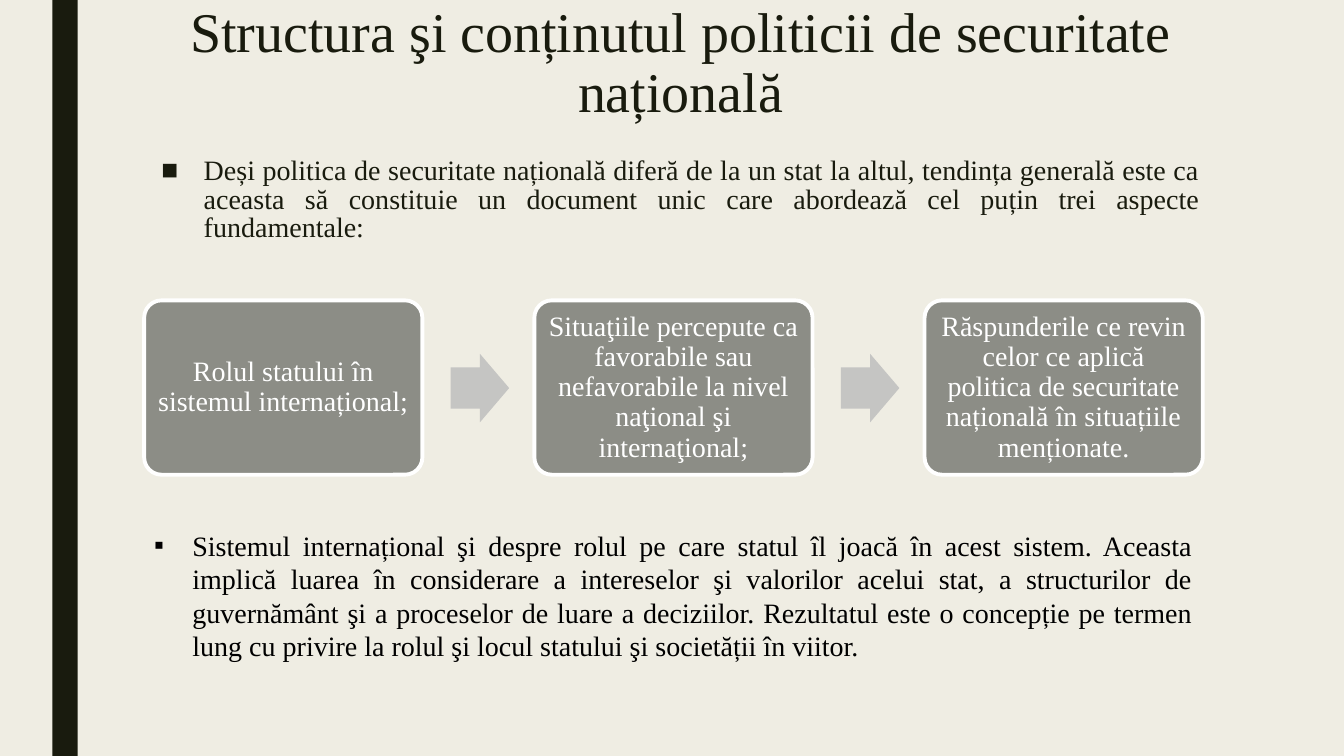
from dataclasses import dataclass
from typing import Optional

from lxml import etree
from pptx import Presentation
from pptx.dml.color import RGBColor
from pptx.enum.shapes import MSO_SHAPE
from pptx.enum.text import MSO_ANCHOR, MSO_AUTO_SIZE, PP_ALIGN
from pptx.oxml.ns import qn
from pptx.util import Emu, Pt

RECT, ROUND, ARROW = MSO_SHAPE.RECTANGLE, MSO_SHAPE.ROUNDED_RECTANGLE, MSO_SHAPE.RIGHT_ARROW
TOP, MIDDLE = MSO_ANCHOR.TOP, MSO_ANCHOR.MIDDLE
CENTER, JUSTIFY = PP_ALIGN.CENTER, PP_ALIGN.JUSTIFY
SCALE = 9144  # EMU in one px, 100 px to the inch


@dataclass(frozen=True)
class Theme:
    font: str = "Times New Roman"
    back: str = "EFEDE3"
    dark: str = "191B0E"
    black: str = "000000"
    white: str = "FFFFFF"
    card: str = "8C8D86"
    arrow: str = "C5C5C3"
    head: int = 40
    text: int = 20
    edge: float = 2.75


@dataclass(frozen=True)
class Box:
    left: int
    top: int
    width: int
    height: int


@dataclass(frozen=True)
class Style:
    size: int
    color: str
    align: PP_ALIGN
    line: float = 1.0
    after: int = 0
    bullet: Optional[str] = None
    indent: int = 0


THEME = Theme()
HEAD = Style(THEME.head, THEME.dark, CENTER, 0.89)
INTRO = Style(THEME.text, THEME.dark, JUSTIFY, 0.84, 2, "■", 42)
STEP = Style(THEME.text, THEME.white, CENTER, 0.9)
NOTE = Style(THEME.text, THEME.black, JUSTIFY, bullet="▪", indent=38)

TITLE = "Structura şi conținutul politicii de securitate națională"
LEAD = (
    "Deși politica de securitate națională diferă de la un stat la altul, "
    "tendința generală este ca aceasta să constituie un document unic care "
    "abordează cel puțin trei aspecte fundamentale:"
)
STEPS = (
    "Rolul statului în sistemul internațional;",
    "Situaţiile percepute ca favorabile sau nefavorabile la nivel naţional şi internaţional;",
    "Răspunderile ce revin celor ce aplică politica de securitate națională "
    "în situațiile menționate.",
)
CLOSE = (
    "Sistemul internațional şi despre rolul pe care statul îl joacă în acest sistem. "
    "Aceasta implică luarea în considerare a intereselor şi valorilor acelui stat, "
    "a structurilor de guvernământ şi a proceselor de luare a deciziilor. "
    "Rezultatul este o concepție pe termen lung cu privire la rolul şi locul "
    "statului şi societății în viitor."
)
CARD = Box(143, 298, 276, 173)
PITCH = 387
SHAFT = Box(447, 351, 58, 68)


def px(value: int) -> Emu:
    return Emu(value * SCALE)


def rgb(color: str) -> RGBColor:
    return RGBColor.from_string(color)


def place(shape, box: Box) -> None:
    shape.left, shape.top = px(box.left), px(box.top)
    shape.width, shape.height = px(box.width), px(box.height)


def write(shape, text: str, style: Style, anchor=TOP) -> None:
    frame = shape.text_frame
    frame.word_wrap = True
    frame.auto_size = MSO_AUTO_SIZE.NONE
    frame.vertical_anchor = anchor
    para = frame.paragraphs[0]
    if style.bullet:
        props = para._p.get_or_add_pPr()
        props.set("marL", str(px(style.indent)))
        props.set("indent", str(-px(style.indent)))
        etree.SubElement(props, qn("a:buFont")).set("typeface", THEME.font)
        etree.SubElement(props, qn("a:buChar")).set("char", style.bullet)
    para.alignment = style.align
    para.line_spacing = style.line
    para.space_before, para.space_after = Pt(0), Pt(style.after)
    run = para.add_run()
    run.text = text
    run.font.name, run.font.size = THEME.font, Pt(style.size)
    run.font.color.rgb = rgb(style.color)


def draw(slide, kind: MSO_SHAPE, box: Box, fill: str, edge: Optional[str] = None):
    shape = slide.shapes.add_shape(kind, 0, 0, 0, 0)
    place(shape, box)
    shape.shadow.inherit = False
    shape.fill.solid()
    shape.fill.fore_color.rgb = rgb(fill)
    if edge:
        shape.line.color.rgb = rgb(edge)
        shape.line.width = Pt(THEME.edge)
    else:
        shape.line.fill.background()
    return shape


def step(slide, index: int, text: str) -> None:
    """Draw one card, with the arrow that leads to it."""
    shift = index * PITCH
    if index:
        box = Box(SHAFT.left + shift - PITCH, SHAFT.top, SHAFT.width, SHAFT.height)
        arrow = draw(slide, ARROW, box, THEME.arrow)
        arrow.adjustments[0], arrow.adjustments[1] = 0.6, 0.5
    box = Box(CARD.left + shift, CARD.top, CARD.width, CARD.height)
    card = draw(slide, ROUND, box, THEME.card, THEME.white)
    card.adjustments[0] = 0.1
    frame = card.text_frame
    frame.margin_left = frame.margin_right = px(8)
    frame.margin_top = frame.margin_bottom = px(8)
    write(card, text, STEP, MIDDLE)


def main() -> None:
    deck = Presentation()
    deck.slide_width, deck.slide_height = px(1333), px(750)
    slide = deck.slides.add_slide(deck.slide_layouts[1])
    slide.background.fill.solid()
    slide.background.fill.fore_color.rgb = rgb(THEME.back)

    draw(slide, RECT, Box(52, 0, 25, 750), THEME.dark)
    title, body = slide.shapes.title, slide.placeholders[1]
    place(title, Box(150, 0, 1050, 152))
    write(title, TITLE, HEAD)
    place(body, Box(150, 152, 1050, 99))
    write(body, LEAD, INTRO)

    for index, text in enumerate(STEPS):
        step(slide, index, text)

    note = slide.shapes.add_textbox(0, 0, 0, 0)
    place(note, Box(143, 519, 1050, 145))
    write(note, CLOSE, NOTE)
    deck.save("out.pptx")


if __name__ == "__main__":
    main()
